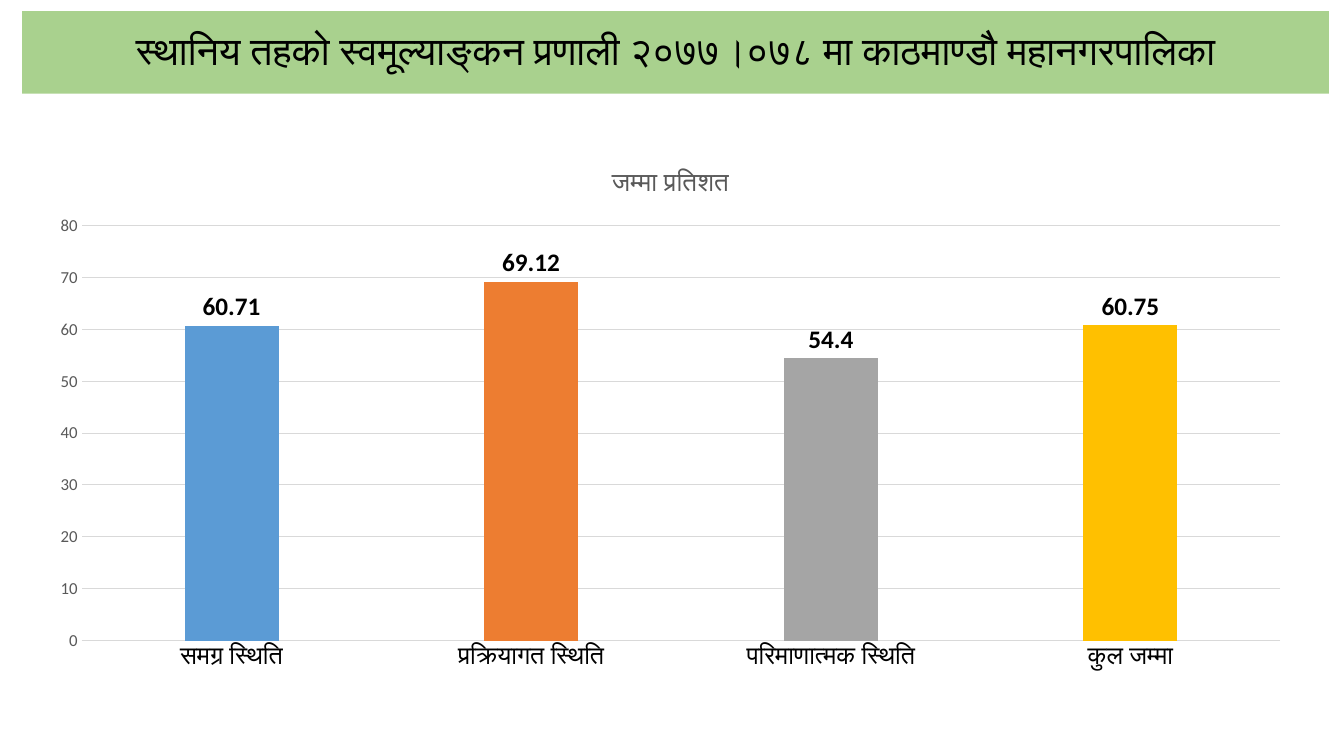
import pptx
import pptx.util
import pptx.chart.data
import pptx.dml.color
import pptx.enum.chart
import pptx.enum.shapes
import pptx.enum.text

PX = 9144  # EMU per px, 100 px to the inch
FONT = "Calibri"
HEADING = "स्थानिय तहको स्वमूल्याङ्कन प्रणाली २०७७।०७८ मा काठमाण्डौ महानगरपालिका"
SERIES = "जम्मा प्रतिशत"
SCORES = [
    ("समग्र स्थिति", 60.71, "5B9BD5"),
    ("प्रक्रियागत स्थिति", 69.12, "ED7D31"),
    ("परिमाणात्मक स्थिति", 54.4, "A5A5A5"),
    ("कुल जम्मा", 60.75, "FFC000"),
]
GRID = "D9D9D9"


def px(*lengths):
    return [length * PX for length in lengths]


def paint(fill, color):
    fill.solid()
    fill.fore_color.rgb = pptx.dml.color.RGBColor.from_string(color)


def rule(line):
    paint(line.fill, GRID)
    line.width = pptx.util.Pt(0.75)


def style(font, size, color, bold=False):
    font.name = FONT
    font.size = pptx.util.Pt(size)
    font.bold = bold
    paint(font.fill, color)


def add_heading(page, box):
    banner = page.shapes.add_shape(pptx.enum.shapes.MSO_SHAPE.RECTANGLE, *px(*box))
    banner.shadow.inherit = False
    paint(banner.fill, "A9D18E")
    banner.line.fill.background()
    frame = banner.text_frame
    frame.word_wrap = True
    frame.vertical_anchor = pptx.enum.text.MSO_ANCHOR.MIDDLE
    para = frame.paragraphs[0]
    para.alignment = pptx.enum.text.PP_ALIGN.CENTER
    para.line_spacing = 0.9
    span = para.add_run()
    span.text = HEADING
    style(span.font, 28, "000000")


def add_score_chart(page, box):
    names, values, colors = zip(*SCORES)
    scores = pptx.chart.data.CategoryChartData()
    scores.categories = names
    scores.add_series(SERIES, values)
    kind = pptx.enum.chart.XL_CHART_TYPE.COLUMN_CLUSTERED
    chart = page.shapes.add_chart(kind, *px(*box), scores).chart
    style(chart.font, 10, "000000")
    chart.has_legend = False

    # Chart title
    chart.has_title = True
    chart.chart_title.include_in_layout = False
    span = chart.chart_title.text_frame.paragraphs[0].add_run()
    span.text = SERIES
    style(span.font, 18.6, "595959")

    # Axes and gridlines
    for axis, size, color in ((chart.category_axis, 18, "000000"),
                              (chart.value_axis, 12, "595959")):
        axis.major_tick_mark = pptx.enum.chart.XL_TICK_MARK.NONE
        axis.minor_tick_mark = pptx.enum.chart.XL_TICK_MARK.NONE
        style(axis.tick_labels.font, size, color)
    rule(chart.category_axis.format.line)
    values_axis = chart.value_axis
    values_axis.format.line.fill.background()
    values_axis.minimum_scale, values_axis.maximum_scale = 0, 80
    values_axis.major_unit = 10
    rule(values_axis.major_gridlines.format.line)

    # Columns, one colour each
    plot = chart.plots[0]
    plot.gap_width, plot.overlap = 219, -27
    plot.vary_by_categories = False
    columns = plot.series[0]
    for index, color in enumerate(colors):
        paint(columns.points[index].format.fill, color)

    # Value labels
    labels = columns.data_labels
    labels.show_value = True
    labels.position = pptx.enum.chart.XL_LABEL_POSITION.OUTSIDE_END
    style(labels.font, 18, "000000", bold=True)


def main():
    deck = pptx.Presentation()
    deck.slide_width, deck.slide_height = px(1333, 750)
    page = deck.slides.add_slide(deck.slide_layouts[6])
    add_heading(page, (22, 11, 1296, 82))
    add_score_chart(page, (35, 146, 1260, 529))
    deck.save("out.pptx")


if __name__ == "__main__":
    main()
